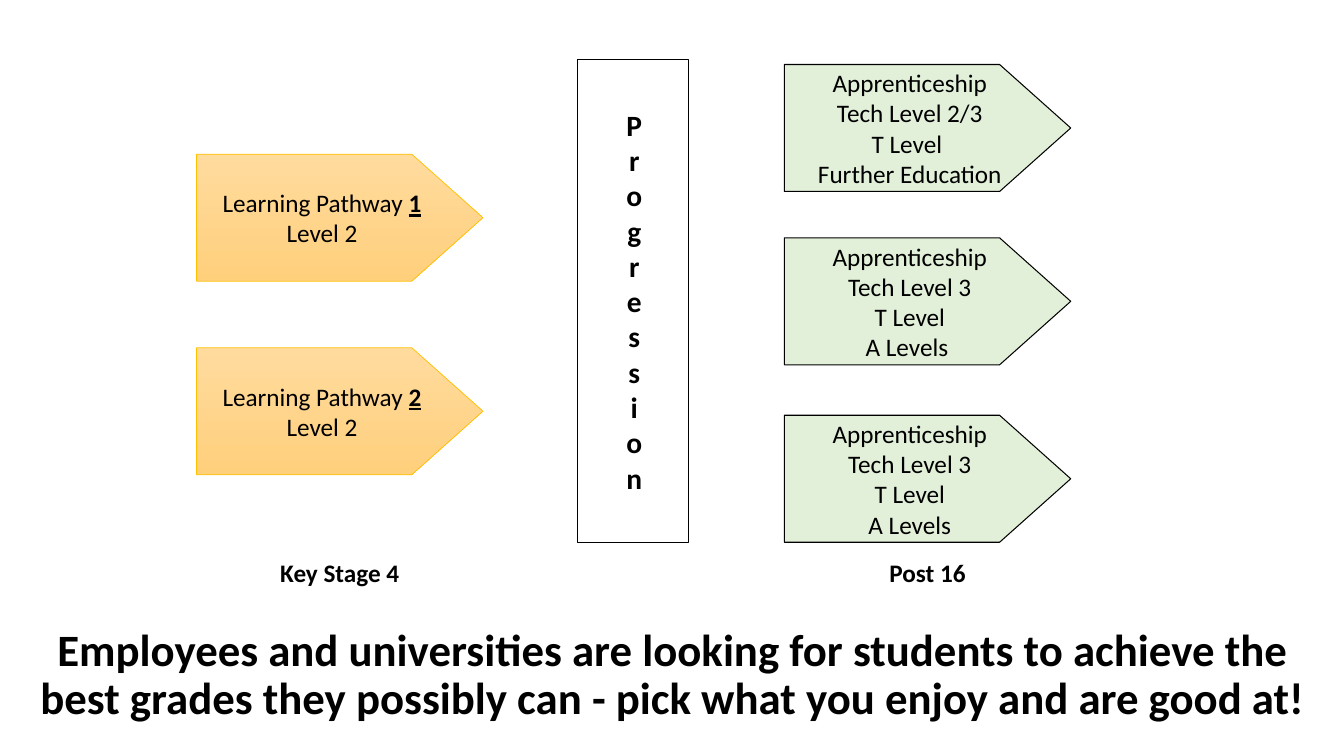
from pptx import Presentation
from pptx.dml.color import RGBColor
from pptx.enum.shapes import MSO_SHAPE
from pptx.enum.text import MSO_ANCHOR, PP_ALIGN
from pptx.util import Inches, Pt

PENTAGON = MSO_SHAPE.PENTAGON
RECTANGLE = MSO_SHAPE.RECTANGLE
MIDDLE = MSO_ANCHOR.MIDDLE
TOP = MSO_ANCHOR.TOP
CENTER = PP_ALIGN.CENTER

FONT = "Calibri"
BLACK = "000000"
ARROW_WIDTH, ARROW_HEIGHT = 2.84, 1.26
LABEL_TOP, LABEL_HEIGHT = 5.48, 0.4
PATHWAY_LEFT, ROUTE_LEFT = 1.95, 7.78

PATHWAYS = [(1.53, "1"), (3.45, "2")]
ROUTES = [
    (0.64, ["Apprenticeship", "Tech Level 2/3", "T Level ", "Further Education"]),
    (2.36, ["Apprenticeship", "Tech Level 3", "T Level", "A Levels "]),
    (4.12, ["Apprenticeship", "Tech Level 3", "T Level", "A Levels"]),
]
MESSAGE = ("Employees and universities are looking for students to achieve the "
           "best grades they possibly can - pick what you enjoy and are good at!")


def color(hex_string):
    """Turn a hex string into a colour."""
    return RGBColor.from_string(hex_string)


def style_text(frame, size, bold=False):
    """Centre every paragraph and apply the font to all runs."""
    for paragraph in frame.paragraphs:
        paragraph.alignment = CENTER
        for run in paragraph.runs:
            run.font.name = FONT
            run.font.size = Pt(size)
            run.font.bold = bold
            run.font.color.rgb = color(BLACK)


def add_outlined(slide, preset, box, line_color, line_width):
    """Add a preset shape with an outline and no shadow."""
    outlined = slide.shapes.add_shape(preset, *map(Inches, box))
    outlined.shadow.inherit = False
    outlined.line.color.rgb = color(line_color)
    outlined.line.width = Pt(line_width)
    return outlined


def add_arrow(slide, left, top, lines, line_color, line_width):
    """Add a pentagon arrow with centred lines of text."""
    box = (left, top, ARROW_WIDTH, ARROW_HEIGHT)
    arrow = add_outlined(slide, PENTAGON, box, line_color, line_width)
    arrow.adjustments[0] = 0.56
    frame = arrow.text_frame
    frame.word_wrap = False
    frame.vertical_anchor = MIDDLE
    frame.text = "\n".join(lines)
    style_text(frame, 18)
    return arrow


def add_pathway(slide, left, top, number):
    """Add an orange learning pathway arrow with its number emphasised."""
    arrow = add_arrow(slide, left, top, ["Learning Pathway ", "Level 2"], "FFC000", 0.5)
    number_run = arrow.text_frame.paragraphs[0].add_run()
    number_run.text = number
    style_text(arrow.text_frame, 18)
    number_run.font.bold = True
    number_run.font.underline = True
    arrow.fill.gradient()
    arrow.fill.gradient_angle = 270
    for stop, shade, position in zip(arrow.fill.gradient_stops, ("FFDB9E", "FFD07C"), (0, 1)):
        stop.color.rgb = color(shade)
        stop.position = position


def add_route(slide, left, top, options):
    """Add a green arrow listing post-16 options."""
    arrow = add_arrow(slide, left, top, options, BLACK, 0.75)
    arrow.fill.solid()
    arrow.fill.fore_color.rgb = color("E2F0D9")


def add_text(slide, box, text, size, anchor=TOP):
    """Add a bold centred text box."""
    text_box = slide.shapes.add_textbox(*map(Inches, box))
    frame = text_box.text_frame
    frame.word_wrap = True
    frame.vertical_anchor = anchor
    frame.text = text
    style_text(frame, size, bold=True)
    return text_box


def add_progression(slide, left, top, width, height):
    """Add the tall bar with its stacked vertical word."""
    bar = add_outlined(slide, RECTANGLE, (left, top, width, height), BLACK, 1)
    bar.fill.solid()
    bar.fill.fore_color.rgb = color("FFFFFF")
    word = add_text(slide, (left + 0.23, top, 0.64, height), "Progression", 21, MIDDLE)
    word.text_frame.margin_left = Inches(0.12)
    word.element.txBody.bodyPr.set("vert", "wordArtVert")


def add_stage(slide, left, label, add_item, items):
    """Add a column of arrows with the stage label below."""
    for top, content in items:
        add_item(slide, left, top, content)
    add_text(slide, (left, LABEL_TOP, ARROW_WIDTH, LABEL_HEIGHT), label, 18)


def add_message(slide, box):
    """Add the closing message across the bottom."""
    message = add_text(slide, box, MESSAGE, 32, MIDDLE)
    message.text_frame.paragraphs[0].line_spacing = 0.9


def main():
    """Build the progression slide and save it."""
    deck = Presentation()
    deck.slide_width, deck.slide_height = Inches(13.33), Inches(7.5)
    slide = deck.slides.add_slide(deck.slide_layouts[6])
    add_stage(slide, PATHWAY_LEFT, "Key Stage 4", add_pathway, PATHWAYS)
    add_progression(slide, 5.73, 0.59, 1.1, 4.79)
    add_stage(slide, ROUTE_LEFT, "Post 16", add_route, ROUTES)
    add_message(slide, (0.2, 6.06, 12.95, 1.29))
    deck.save("out.pptx")


if __name__ == "__main__":
    main()
